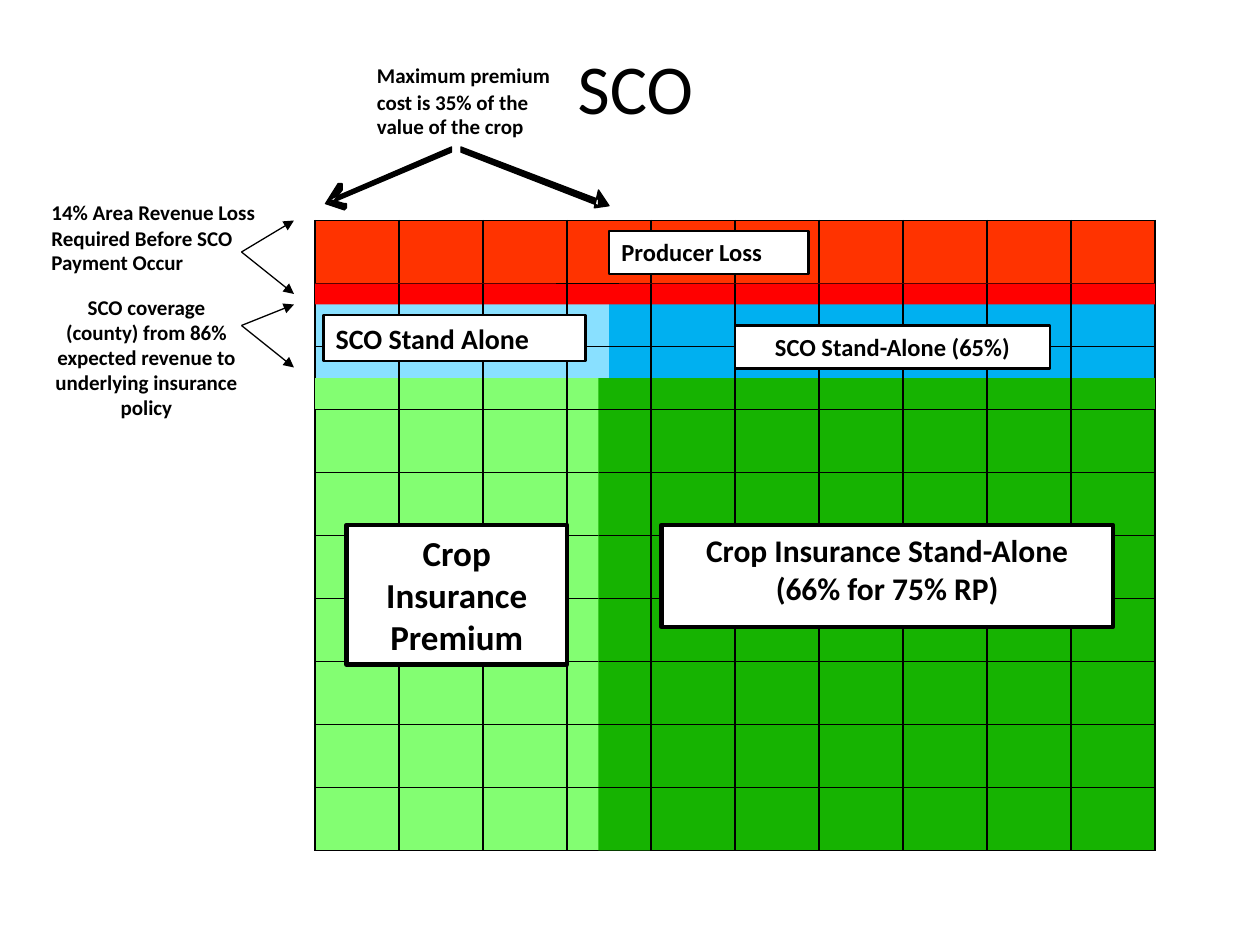
from lxml import etree
from pptx import Presentation
from pptx.dml.color import RGBColor
from pptx.enum.shapes import MSO_CONNECTOR, MSO_SHAPE
from pptx.enum.text import MSO_ANCHOR, MSO_AUTO_SIZE, PP_ALIGN
from pptx.oxml.ns import qn
from pptx.util import Pt

PX = 7620  # 120 px to the inch
BLACK = RGBColor(0x00, 0x00, 0x00)
WHITE = RGBColor(0xFF, 0xFF, 0xFF)
ORANGE_RED = RGBColor(0xFF, 0x33, 0x00)
RED = RGBColor(0xFF, 0x00, 0x00)
SKY = RGBColor(0x89, 0xE0, 0xFF)
BLUE = RGBColor(0x00, 0xB0, 0xF0)
LIME = RGBColor(0x83, 0xFE, 0x72)
GREEN = RGBColor(0x16, 0xB3, 0x01)
LEFT, CENTER = PP_ALIGN.LEFT, PP_ALIGN.CENTER

GRID_LEFT, GRID_TOP, COLUMN, ROW, COUNT = 300, 210, 80, 60, 10
GRID_RIGHT = GRID_LEFT + COUNT * COLUMN
# rows, cells in the premium colour, premium colour, remaining colour
ROW_BANDS = [(1, 0, ORANGE_RED, ORANGE_RED), (2, 3, SKY, BLUE), (7, 4, LIME, GREEN)]

PATCHES = [
    ((570, 390, 50, 420), GREEN),
    ((540, 270, 40, 120), SKY),
    ((GRID_LEFT, 360, 800, 30), GREEN),
    ((GRID_LEFT, 360, 270, 30), LIME),
    ((GRID_LEFT, 270, 800, 20), RED),
]

# y, left, right
HORIZONTALS = [
    (270, 530, 590), (330, GRID_LEFT, GRID_RIGHT), (390, GRID_LEFT, GRID_RIGHT),
    (390, 560, 630), (450, 570, 640), (510, 570, 620), (570, 570, 620),
    (630, 570, 630), (690, 560, 630), (750, 560, 630),
]
# x, top, bottom, width in points
VERTICALS = [(620, 390, 810, 1.25)]
VERTICALS += [(x, 270, 400 if x == 940 else 390, 1.5 if x == 620 else 0.75)
              for x in range(GRID_LEFT + COLUMN, GRID_RIGHT, COLUMN)]
VERTICALS += [(x, 270, 280, 0.75) for x in (700, 780, 860)] + [(700, 330, 340, 0.75)]

BRACKET_ARROWS = [(230, 240, 280, 210), (230, 240, 280, 280),
                  (230, 310, 280, 290), (230, 310, 280, 350)]
PREMIUM_ARROWS = [
    [[(439, 140), (570, 190), (570, 196), (439, 145)],
     [(570, 181), (580, 196), (566, 198)]],
    [[(430, 145), (314, 194), (314, 190), (430, 140)],
     [(328, 200), (310, 194), (322, 175), (326, 175), (326, 181), (316, 194),
      (314, 190), (328, 194), (330, 194), (330, 198)]],
]

# left, top, lines with their widths
NOTES = [
    (49, 190, [("14% Area Revenue Loss", 200), ("Required Before SCO", 179),
               ("Payment Occur", 127)]),
    (359, 60, [("Maximum premium", 172), ("cost is 35% of the", 151),
               ("value of the crop", 142)]),
]
NOTE_LINE_OFFSETS = (0, 25, 48)
COUNTY_NOTE = ("SCO coverage (county) from 86% expected revenue to "
               "underlying insurance policy")

# text, box, size, alignment, line width
LABELS = [
    ("Producer Loss", (580, 220, 190, 41), 14, LEFT, 1.5),
    ("Crop Insurance Stand-Alone\n(66% for 75% RP)", (630, 500, 430, 97), 18, CENTER, 2.5),
    ("Crop Insurance Premium", (330, 500, 210, 133), 20, CENTER, 2.5),
    ("SCO Stand-Alone (65%)", (700, 310, 300, 41), 14, CENTER, 1.5),
    ("SCO Stand Alone", (308, 300, 250, 44), 16, LEFT, 1.5),
]


def emu(*lengths):
    return [length * PX for length in lengths]


def write(frame, text, size, align, bold=True, **frame_format):
    for name, value in frame_format.items():
        setattr(frame, name, value)
    frame.text = text
    for paragraph in frame.paragraphs:
        paragraph.alignment = align
        font_format = {"name": "Calibri", "size": Pt(size), "bold": bold}
        for name, value in font_format.items():
            setattr(paragraph.font, name, value)
        paragraph.font.color.rgb = BLACK


def add_text(slide, text, box, size, align, **frame_format):
    frame = slide.shapes.add_textbox(*emu(*box)).text_frame
    write(frame, text, size, align, **frame_format)


def add_rectangle(slide, box, fill):
    rectangle = slide.shapes.add_shape(MSO_SHAPE.RECTANGLE, *emu(*box))
    rectangle.shadow.inherit = False
    rectangle.fill.solid()
    rectangle.fill.fore_color.rgb = fill
    rectangle.line.fill.background()
    return rectangle


def add_line(slide, ends, width=0.75, arrow=False):
    connector = slide.shapes.add_connector(MSO_CONNECTOR.STRAIGHT, *emu(*ends))
    connector.line.color.rgb = BLACK
    connector.line.width = Pt(width)
    properties = connector._element.spPr
    if arrow:
        etree.SubElement(properties.find(qn("a:ln")), qn("a:tailEnd"), type="triangle")
    etree.SubElement(properties, qn("a:effectLst"))


def add_borders(cell):
    """Put a thin black line on all four sides, ahead of the cell's fill."""
    properties = cell._tc.get_or_add_tcPr()
    for position, side in enumerate(("lnL", "lnR", "lnT", "lnB")):
        border = etree.Element(qn(f"a:{side}"), w=str(Pt(1)))
        fill = etree.SubElement(border, qn("a:solidFill"))
        etree.SubElement(fill, qn("a:srgbClr"), val=str(BLACK))
        properties.insert(position, border)


def add_grid(slide):
    box = emu(GRID_LEFT, GRID_TOP, COUNT * COLUMN, COUNT * ROW)
    table = slide.shapes.add_table(COUNT, COUNT, *box).table
    table.first_row = table.horz_banding = False
    bands = [band for rows, *band in ROW_BANDS for _ in range(rows)]
    for row, (premium_cells, premium, remaining) in enumerate(bands):
        for column in range(COUNT):
            cell = table.cell(row, column)
            cell.fill.solid()
            cell.fill.fore_color.rgb = premium if column < premium_cells else remaining
            add_borders(cell)


def add_outline(slide, contours):
    builder = None
    for start, *rest in contours:
        if builder is None:
            builder = slide.shapes.build_freeform(*start, scale=PX)
        else:
            builder.move_to(*start)
        builder.add_line_segments(rest, close=True)
    outline = builder.convert_to_shape()
    outline.shadow.inherit = False
    outline.fill.solid()
    outline.fill.fore_color.rgb = BLACK
    outline.line.color.rgb = BLACK
    outline.line.width = Pt(0)


def main():
    presentation = Presentation()
    presentation.slide_width, presentation.slide_height = emu(1200, 900)
    slide = presentation.slides.add_slide(presentation.slide_layouts[6])

    add_text(slide, "SCO", (50, 30, 1110, 104), 40, CENTER, bold=False,
             word_wrap=True, vertical_anchor=MSO_ANCHOR.MIDDLE)
    add_grid(slide)
    for box, fill in PATCHES:
        add_rectangle(slide, box, fill)
    for y, left, right in HORIZONTALS:
        add_line(slide, (left, y, right, y))
    for x, top, bottom, width in VERTICALS:
        add_line(slide, (x, top, x, bottom), width)
    for ends in BRACKET_ARROWS:
        add_line(slide, ends, arrow=True)
    for contours in PREMIUM_ARROWS:
        add_outline(slide, contours)

    flush = dict.fromkeys(("margin_left", "margin_top", "margin_right", "margin_bottom"), 0)
    for left, top, lines in NOTES:
        for offset, (text, width) in zip(NOTE_LINE_OFFSETS, lines):
            add_text(slide, text, (left, top + offset, width, 24), 12, LEFT,
                     word_wrap=False, **flush)
    add_text(slide, COUNTY_NOTE, (49, 280, 181, 121), 12, CENTER, word_wrap=True, **flush)

    for text, box, size, align, width in LABELS:
        label = add_rectangle(slide, box, WHITE)
        label.line.color.rgb = BLACK
        label.line.width = Pt(width)
        write(label.text_frame, text, size, align, word_wrap=True,
              vertical_anchor=MSO_ANCHOR.TOP, auto_size=MSO_AUTO_SIZE.SHAPE_TO_FIT_TEXT)
    presentation.save("out.pptx")


if __name__ == "__main__":
    main()
